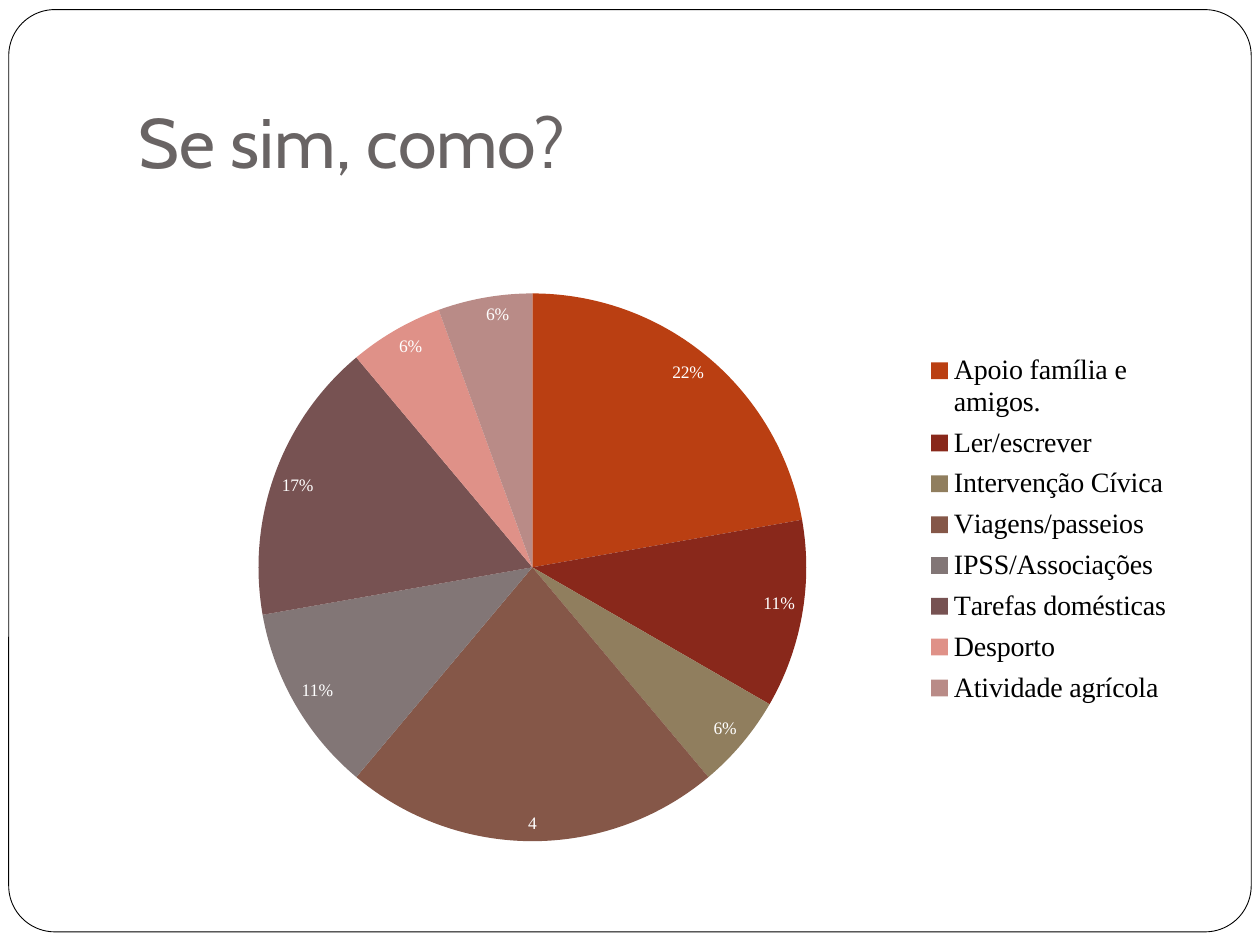
from lxml.etree import SubElement
from pptx import Presentation
from pptx.chart.data import CategoryChartData
from pptx.dml.color import RGBColor
from pptx.enum.chart import XL_CHART_TYPE, XL_LABEL_POSITION, XL_LEGEND_POSITION
from pptx.enum.shapes import MSO_SHAPE
from pptx.enum.text import MSO_ANCHOR, PP_ALIGN
from pptx.oxml.ns import qn
from pptx.util import Pt

HUES = {
    "white": "FFFFFF", "black": "000000", "title": "696464",
    "orange": "BA3F12", "red": "89281B", "olive": "907E5E", "brown": "855748",
    "grey": "827676", "plum": "775252", "pink": "DF9188", "rose": "B98B87",
}

SLICES = [
    ("Apoio família e amigos.", 4, "22%", "orange"),
    ("Ler/escrever", 2, "11%", "red"),
    ("Intervenção Cívica", 1, "6%", "olive"),
    ("Viagens/passeios", 4, None, "brown"),
    ("IPSS/Associações", 2, "11%", "grey"),
    ("Tarefas domésticas", 3, "17%", "plum"),
    ("Desporto", 1, "6%", "pink"),
    ("Atividade agrícola", 1, "6%", "rose"),
]


def hue(name):
    return RGBColor.from_string(HUES[name])


def place(part, x, y, w, h, inner=False):
    for old in part.findall(qn("c:layout")):
        part.remove(old)
    box = SubElement(part, qn("c:layout"))
    man = SubElement(box, qn("c:manualLayout"))
    rules = [("layoutTarget", "inner")] if inner else []
    rules += [("xMode", "edge"), ("yMode", "edge"),
              ("x", x), ("y", y), ("w", w), ("h", h)]
    for tag, val in rules:
        SubElement(man, qn(f"c:{tag}")).set("val", str(val))
    return box


class Deck:
    head = "Cabin"
    body = "Times New Roman"

    def __init__(self, wide, high):
        self.show = Presentation()
        self.show.slide_width, self.show.slide_height = Pt(wide), Pt(high)
        self.slide = self.show.slides.add_slide(self.show.slide_layouts[5])

    def style(self, font, size, color, face):
        font.size, font.name, font.color.rgb = Pt(size), face, hue(color)

    def frame(self, *box):
        shape = self.slide.shapes.add_shape(MSO_SHAPE.ROUNDED_RECTANGLE, *map(Pt, box))
        shape.adjustments[0] = 0.05
        shape.shadow.inherit = False
        shape.fill.solid()
        shape.fill.fore_color.rgb = hue("white")
        shape.line.color.rgb = hue("black")
        shape.line.width = Pt(0.5)

    def title(self, text, *box):
        shape = self.slide.shapes.title
        shape.left, shape.top, shape.width, shape.height = map(Pt, box)
        self.slide.shapes._spTree.append(shape._element)
        frame = shape.text_frame
        frame.text = text
        frame.vertical_anchor = MSO_ANCHOR.BOTTOM
        frame.margin_bottom = Pt(7.2)
        para = frame.paragraphs[0]
        para.alignment = PP_ALIGN.LEFT
        self.style(para.font, 40, "title", self.head)

    def pie(self, slices, *box):
        data = CategoryChartData()
        data.categories = [row[0] for row in slices]
        data.add_series("Series 1", [row[1] for row in slices])
        chart = self.slide.shapes.add_chart(XL_CHART_TYPE.PIE, *map(Pt, box), data).chart
        chart.has_title = False
        self.style(chart.font, 10, "black", self.body)

        chart.has_legend = True
        legend = chart.legend
        legend.position = XL_LEGEND_POSITION.RIGHT
        legend.include_in_layout = False
        self.style(legend.font, 16, "black", self.body)
        spot = place(legend._element, 0.74, 0.12, 0.25, 0.63)
        legend._element.find(qn("c:legendPos")).addnext(spot)

        plot = chart.plots[0]
        plot.vary_by_categories = True
        area = plot._element.getparent()
        area.insert(0, place(area, 0.115, 0.03, 0.52, 0.94, inner=True))
        series = plot.series[0]
        labels = series.data_labels
        labels.show_value = True
        labels.position = XL_LABEL_POSITION.INSIDE_END
        self.style(labels.font, 10, "white", self.body)
        for i, (_, _, text, color) in enumerate(slices):
            point = series.points[i]
            point.format.fill.solid()
            point.format.fill.fore_color.rgb = hue(color)
            if text:
                label = point.data_label
                label.text_frame.text = text
                font = label.text_frame.paragraphs[0].runs[0].font
                self.style(font, 10, "white", self.body)
                label.position = XL_LABEL_POSITION.INSIDE_END


def main():
    deck = Deck(720, 540)
    deck.frame(5, 5.5, 710, 527)
    deck.pie(SLICES, 78.5, 157.5, 602, 333.5)
    deck.title("Se sim, como?", 72, 21.6, 612, 90)
    deck.show.save("out.pptx")


if __name__ == "__main__":
    main()
